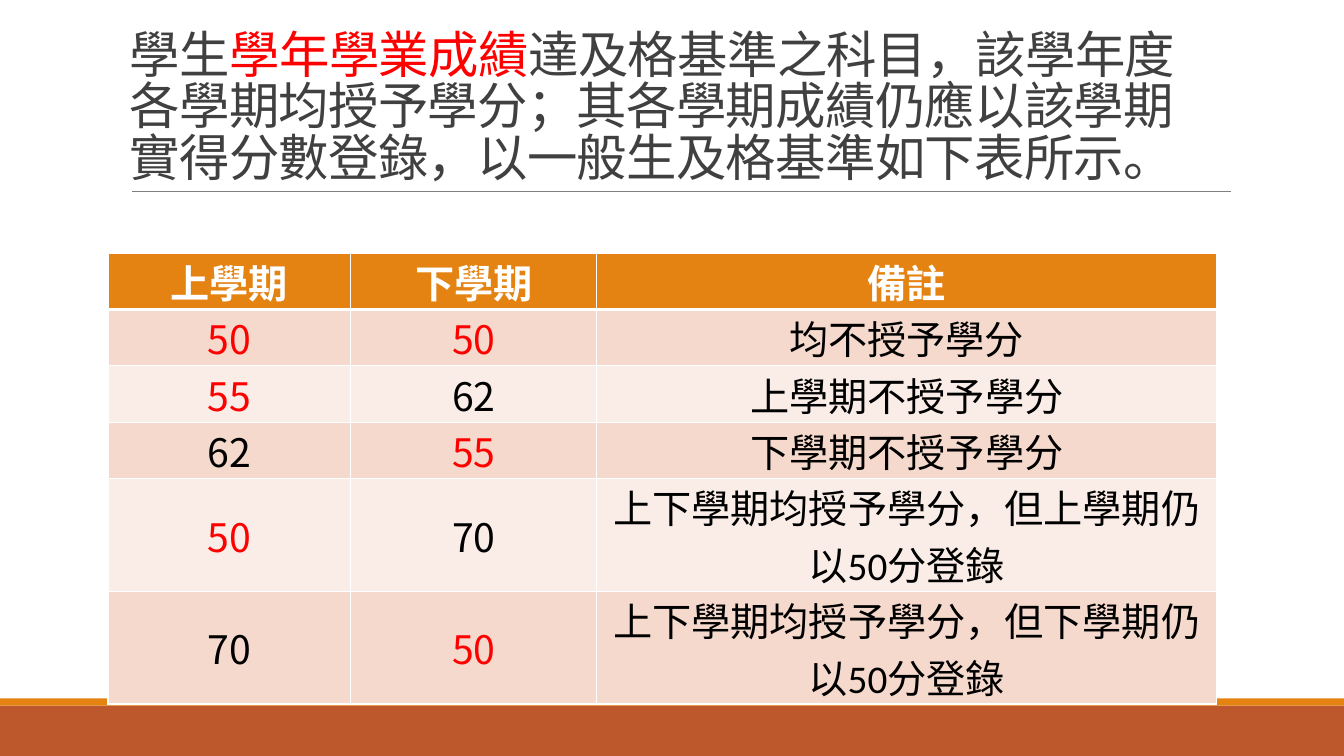
from lxml.etree import SubElement, fromstring
from pptx import Presentation
from pptx.dml.color import RGBColor
from pptx.enum.shapes import MSO_CONNECTOR, MSO_SHAPE
from pptx.enum.text import MSO_ANCHOR, PP_ALIGN
from pptx.oxml.ns import nsdecls, qn
from pptx.util import Cm, Pt

CJK_FONT = "Noto Sans CJK SC"
LATIN_FONT = "Calibri"
ORANGE, RUST, RED, WHITE, BLACK = "E48312", "BD582C", "FF0000", "FFFFFF", "000000"
GREY_TEXT, GREY_RULE = "404040", "808080"
BANDS = ("F5D9CC", "FAEDE7")

SLIDE_WIDTH, SLIDE_HEIGHT = 33.87, 19.05
PASS_MARK = 60
LINE_HEIGHT = 1.42
COLUMN_WIDTHS = (6.12, 6.2, 15.62)
TITLE_SPANS = (
    ("學生", GREY_TEXT),
    ("學年學業成績", RED),
    ("達及格基準之科目，該學年度各學期均授予學分；"
     "其各學期成績仍應以該學期實得分數登錄，以一般生及格基準如下表所示。", GREY_TEXT),
)
HEADINGS = ("上學期", "下學期", "備註")
# First term, second term, remark, lines the remark takes
SCORES = (
    (50, 50, "均不授予學分", 1),
    (55, 62, "上學期不授予學分", 1),
    (62, 55, "下學期不授予學分", 1),
    (50, 70, "上下學期均授予學分，但上學期仍以50分登錄", 2),
    (70, 50, "上下學期均授予學分，但下學期仍以50分登錄", 2),
)


def color(value):
    return RGBColor.from_string(value)


def set_font(para, size, latin):
    """Set size and both the Latin and East Asian typefaces of a paragraph."""
    para.font.size = Pt(size)
    para.font.name = latin
    defaults = para._p.pPr.find(qn("a:defRPr"))
    SubElement(defaults, qn("a:ea")).set("typeface", CJK_FONT)


def set_borders(cell, widths):
    """Draw white borders of the given point widths: left, right, top, bottom."""
    properties = cell._tc.get_or_add_tcPr()
    for index, (side, width) in enumerate(zip("LRTB", widths)):
        properties.insert(index, fromstring(
            f'<a:ln{side} {nsdecls("a")} w="{Pt(width)}"><a:solidFill>'
            f'<a:srgbClr val="{WHITE}"/></a:solidFill></a:ln{side}>'))


def add_footer(page, top, height, stripe):
    for y, tall, fill in ((top, height, RUST), (top - stripe, stripe, ORANGE)):
        bar = page.shapes.add_shape(
            MSO_SHAPE.RECTANGLE, 0, Cm(y), Cm(SLIDE_WIDTH), Cm(tall))
        bar.shadow.inherit = False
        bar.fill.solid()
        bar.fill.fore_color.rgb = color(fill)
        bar.line.fill.background()


def add_title(page, left, top, width, height):
    """Place the title with a thin rule along its foot."""
    bottom = Cm(top + height)
    rule = page.shapes.add_connector(
        MSO_CONNECTOR.STRAIGHT, Cm(left + 0.31), bottom, Cm(left + width + 0.05), bottom)
    rule.line.color.rgb = color(GREY_RULE)
    rule.line.width = Pt(0.5)
    SubElement(rule._element.spPr, qn("a:effectLst"))

    box = page.shapes.add_textbox(Cm(left), Cm(top), Cm(width), Cm(height))
    box.text_frame.word_wrap = True
    box.text_frame.vertical_anchor = MSO_ANCHOR.BOTTOM
    para = box.text_frame.paragraphs[0]
    para.line_spacing = 0.85
    set_font(para, 36, CJK_FONT)
    for text, tint in TITLE_SPANS:
        span = para.add_run()
        span.text = text
        span.font.color.rgb = color(tint)
        span._r.get_or_add_rPr().set("spc", "-50")


def fill_cell(cell, value, fill, tint, borders, bold=False):
    cell.fill.solid()
    cell.fill.fore_color.rgb = color(fill)
    set_borders(cell, borders)
    cell.vertical_anchor = MSO_ANCHOR.MIDDLE
    cell.margin_left = cell.margin_right = Cm(0.18)
    cell.margin_top = cell.margin_bottom = 0
    para = cell.text_frame.paragraphs[0]
    para.text = str(value)
    para.alignment = PP_ALIGN.CENTER
    set_font(para, 28, CJK_FONT if isinstance(value, int) else LATIN_FONT)
    para.font.bold = bold
    para.font.color.rgb = color(tint)


def add_score_table(page, left, top):
    lines = [1] + [score[-1] for score in SCORES]
    table = page.shapes.add_table(
        len(lines), len(HEADINGS), Cm(left), Cm(top),
        Cm(sum(COLUMN_WIDTHS)), Cm(LINE_HEIGHT * sum(lines))).table
    for column, width in zip(table.columns, COLUMN_WIDTHS):
        column.width = Cm(width)
    for row, count in zip(table.rows, lines):
        row.height = Cm(LINE_HEIGHT * count)

    for column, heading in enumerate(HEADINGS):
        fill_cell(table.cell(0, column), heading, ORANGE, WHITE, (1, 1, 1, 3), bold=True)
    for row, (*values, _) in enumerate(SCORES, start=1):
        borders = (1, 1, 3 if row == 1 else 1, 1)
        for column, value in enumerate(values):
            failed = isinstance(value, int) and value < PASS_MARK
            fill_cell(table.cell(row, column), value, BANDS[(row - 1) % 2],
                      RED if failed else BLACK, borders)


def main():
    deck = Presentation()
    deck.slide_width, deck.slide_height = Cm(SLIDE_WIDTH), Cm(SLIDE_HEIGHT)
    page = deck.slides.add_slide(deck.slide_layouts[6])
    add_footer(page, 17.78, 1.27, 0.18)
    add_title(page, 3.02, 0.48, 27.94, 4.34)
    add_score_table(page, 2.72, 6.38)
    deck.save("out.pptx")


if __name__ == "__main__":
    main()
